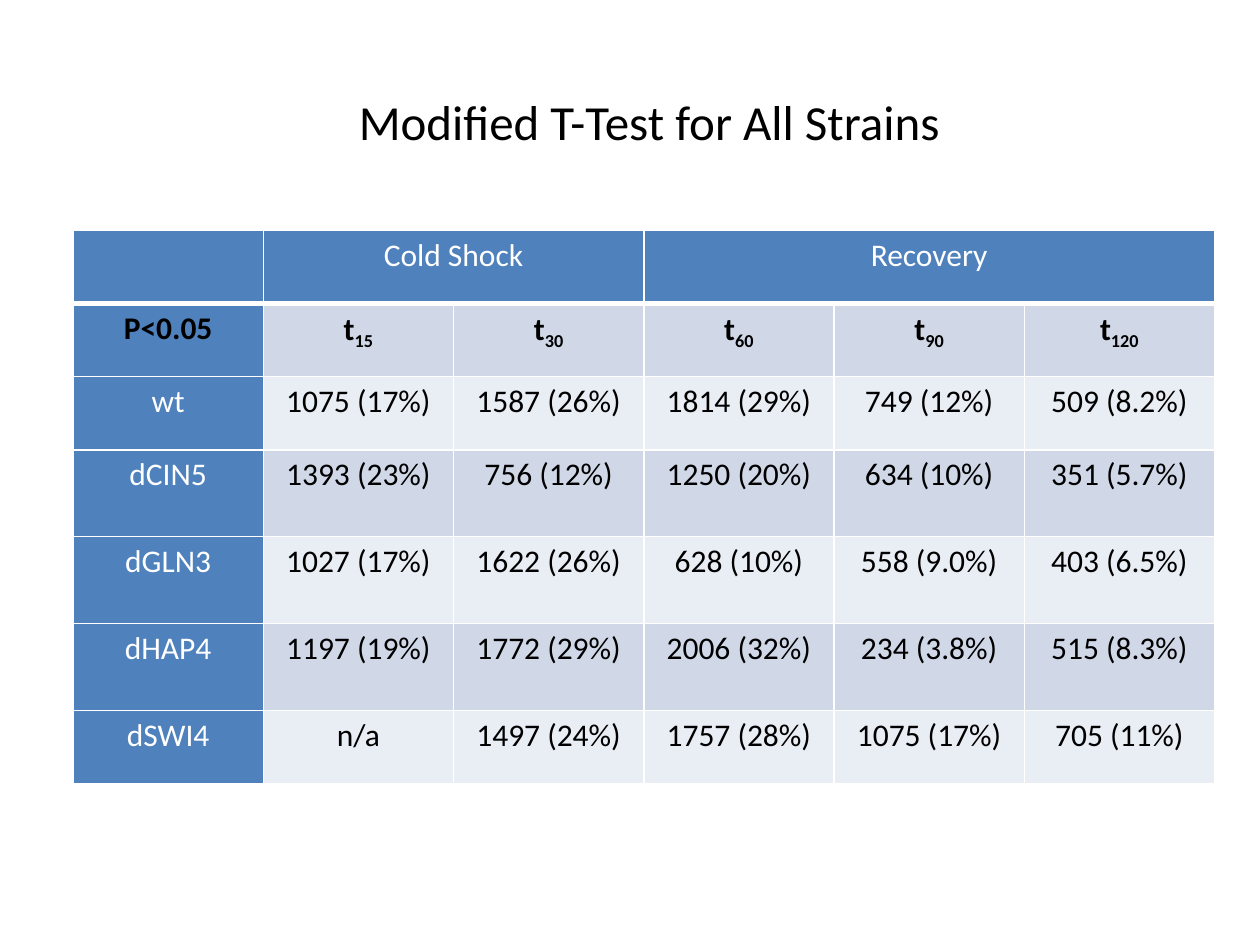
import pptx
import pptx.util
import pptx.dml.color
import pptx.enum.text
import pptx.oxml
import pptx.oxml.ns
from lxml import etree

Inches = pptx.util.Inches
RGB = pptx.dml.color.RGBColor
BLUE = RGB(0x4F, 0x81, 0xBD)
DARK = RGB(0xD0, 0xD8, 0xE8)
LIGHT = RGB(0xE9, 0xED, 0xF4)
WHITE = RGB(0xFF, 0xFF, 0xFF)
BLACK = RGB(0, 0, 0)

TIMES = ["15", "30", "60", "90", "120"]
STRAINS = [
    ["wt", "1075 (17%)", "1587 (26%)", "1814 (29%)", "749 (12%)", "509 (8.2%)"],
    ["dCIN5", "1393 (23%)", "756 (12%)", "1250 (20%)", "634 (10%)", "351 (5.7%)"],
    ["dGLN3", "1027 (17%)", "1622 (26%)", "628 (10%)", "558 (9.0%)", "403 (6.5%)"],
    ["dHAP4", "1197 (19%)", "1772 (29%)", "2006 (32%)", "234 (3.8%)", "515 (8.3%)"],
    ["dSWI4", "n/a", "1497 (24%)", "1757 (28%)", "1075 (17%)", "705 (11%)"],
]
HEIGHTS = [0.58, 0.58, 0.58, 0.69, 0.69, 0.69, 0.58]
WIDTH = 1.51


class Deck:
    font = "Calibri"

    def __init__(self):
        self.show = pptx.Presentation()
        self.show.slide_width = Inches(10)
        self.show.slide_height = Inches(7.5)
        self.slide = self.show.slides.add_slide(self.show.slide_layouts[6])

    def run(self, para, text, size, color, bold=False, sub=False):
        run = para.add_run()
        run.text = text
        font = run.font
        font.name, font.size, font.bold = self.font, pptx.util.Pt(size), bold
        font.color.rgb = color
        if sub:
            font._element.set("baseline", "-25000")

    def title(self, text, left, top, width, height):
        box = self.slide.shapes.add_textbox(
            Inches(left), Inches(top), Inches(width), Inches(height))
        frame = box.text_frame
        frame.word_wrap = True
        frame.auto_size = pptx.enum.text.MSO_AUTO_SIZE.SHAPE_TO_FIT_TEXT
        self.run(frame.paragraphs[0], text, 28, BLACK)

    def table(self, left, top, width, heights, cols):
        frame = self.slide.shapes.add_table(
            len(heights), cols, Inches(left), Inches(top),
            Inches(width * cols), Inches(sum(heights)))
        table = frame.table
        for col in table.columns:
            col.width = Inches(width)
        for row, height in zip(table.rows, heights):
            row.height = Inches(height)
        return table

    def cell(self, cell, fill, runs, color, bold=False, base=1):
        cell.margin_left = cell.margin_right = Inches(0.07)
        cell.margin_top = cell.margin_bottom = 0
        self.edges(cell, base)
        cell.fill.solid()
        cell.fill.fore_color.rgb = fill
        para = cell.text_frame.paragraphs[0]
        para.alignment = pptx.enum.text.PP_ALIGN.CENTER
        para.line_spacing = 1.15
        for spot, text in enumerate(runs):
            self.run(para, text, 18, color, bold, sub=spot > 0)

    def edges(self, cell, base):
        # White borders; base is the width of the bottom one
        props = cell._tc.get_or_add_tcPr()
        name = pptx.oxml.ns.qn
        for side, size in zip("LRTB", (1, 1, 1, base)):
            line = etree.SubElement(props, name("a:ln" + side))
            line.set("w", str(pptx.util.Pt(size)))
            fill = etree.SubElement(line, name("a:solidFill"))
            etree.SubElement(fill, name("a:srgbClr")).set("val", str(WHITE))


def main():
    deck = Deck()
    table = deck.table(0.58, 1.83, WIDTH, HEIGHTS, len(TIMES) + 1)

    # Phase header with merged cells
    phases = {1: ("Cold Shock", 2), 3: ("Recovery", 5)}
    for col in range(len(TIMES) + 1):
        text, last = phases.get(col, ("", col))
        deck.cell(table.cell(0, col), BLUE, [text] if text else [], WHITE, base=3)
    for col, (text, last) in phases.items():
        table.cell(0, col).merge(table.cell(0, last))

    # Time points
    deck.cell(table.cell(1, 0), BLUE, ["P<0.05"], BLACK, bold=True)
    for col, time in enumerate(TIMES, 1):
        deck.cell(table.cell(1, col), DARK, ["t", time], BLACK, bold=True)

    # Strains, in banded rows
    for row, strain in enumerate(STRAINS, 2):
        band = DARK if row % 2 else LIGHT
        for col, text in enumerate(strain):
            fill, color = (band, BLACK) if col else (BLUE, WHITE)
            deck.cell(table.cell(row, col), fill, [text], color)

    # Title
    deck.title("Modified T-Test for All Strains", 2.75, 0.68, 4.92, 0.57)
    deck.show.save("out.pptx")


if __name__ == "__main__":
    main()
